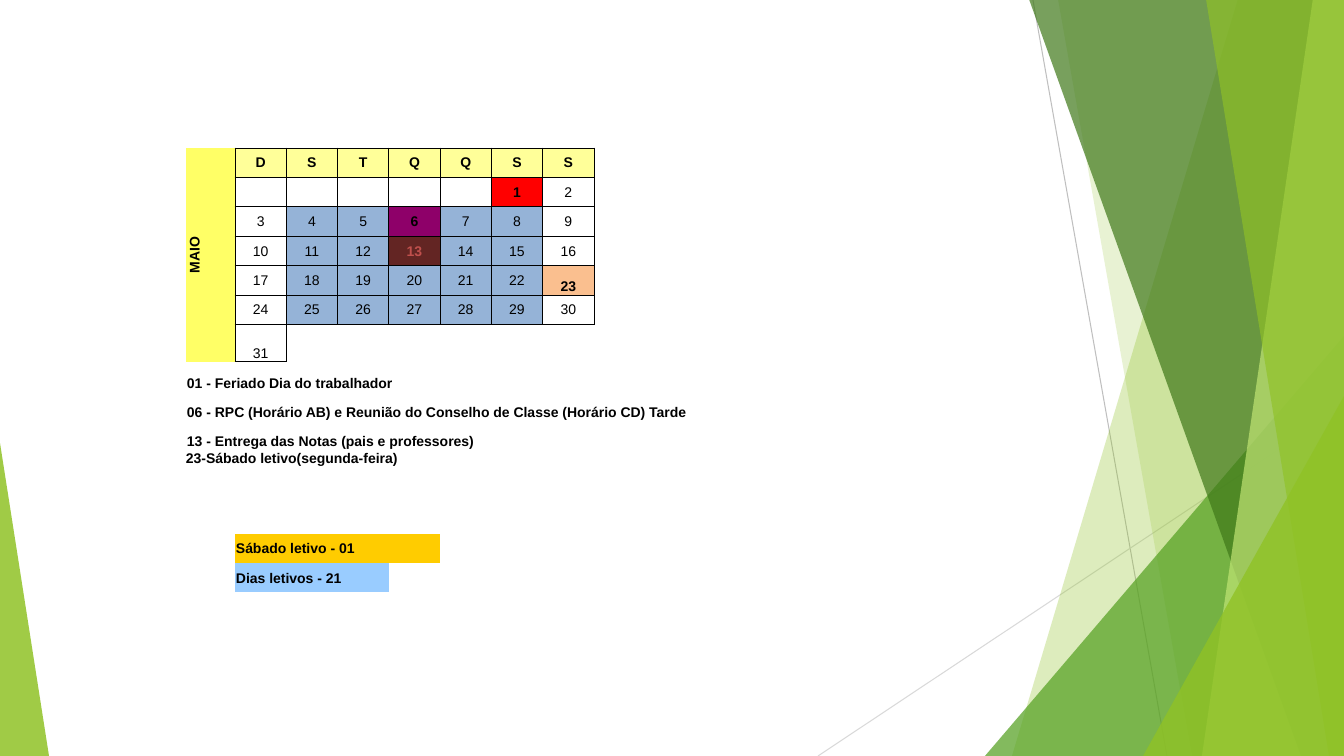
import pptx
import pptx.util
import pptx.dml.color
import pptx.enum.shapes
import pptx.enum.text
import pptx.oxml
import pptx.oxml.ns
import lxml.etree

RGB = pptx.dml.color.RGBColor
BLACK, WHITE = RGB(0, 0, 0), RGB(255, 255, 255)
SILVER, PALE = RGB(0xBF, 0xBF, 0xBF), RGB(0xD9, 0xD9, 0xD9)
LEAF, GRASS = RGB(0x90, 0xC2, 0x26), RGB(0x54, 0xA0, 0x21)
MOSS, LIME = RGB(0x3F, 0x78, 0x19), RGB(0xC0, 0xE4, 0x74)
YELLOW, CREAM = RGB(255, 255, 0x66), RGB(255, 255, 0x99)
RED, PLUM = RGB(255, 0, 0), RGB(0x8E, 0, 0x69)
WINE, ROSE = RGB(0x63, 0x25, 0x23), RGB(0xC0, 0x50, 0x4D)
BLUE, PEACH = RGB(0x95, 0xB3, 0xD7), RGB(0xFA, 0xBF, 0x8F)
GOLD, SKY = RGB(255, 0xCC, 0), RGB(0x99, 0xCC, 255)
WIDE, HIGH = 1344, 756
SCALE = 12192000 / WIDE
PLAIN = "{2D5ABB26-0587-4C30-8999-92F81FD0307C}"
KINDS = pptx.enum.shapes
ALIGN = pptx.enum.text.PP_ALIGN
ANCHOR = pptx.enum.text.MSO_ANCHOR
MARKS = {1: RED, 6: PLUM, 13: WINE, 23: PEACH}
qn = pptx.oxml.ns.qn


def px(size):
    """Turn pixels into EMU."""
    return pptx.util.Emu(round(size * SCALE))


def sub(node, tag, **attrs):
    """Add a child element to an XML node."""
    return lxml.etree.SubElement(node, qn(tag), attrs)


def put(item, values):
    """Set each attribute named in a dict."""
    for name, value in values.items():
        setattr(item, name, value)


def paint(shape, color, alpha):
    """Give a shape a see-through fill without line or shadow."""
    shape.shadow.inherit = False
    shape.line.fill.background()
    shape.fill.solid()
    shape.fill.fore_color.rgb = color
    tint = shape.fill._xPr.find(qn("a:solidFill"))[0]
    sub(tint, "a:alpha", val=str(alpha * 1000))


def ray(slide, start, end, color):
    """Draw a thin straight line."""
    line = slide.shapes.add_connector(
        KINDS.MSO_CONNECTOR.STRAIGHT, *map(px, start + end))
    put(line.line, {"width": pptx.util.Pt(0.75)})
    line.line.color.rgb = color
    sub(line._element.spPr, "a:effectLst")


def band(slide, top, low, color, alpha):
    """Fill the area from a slanted edge to the right side."""
    pen = slide.shapes.build_freeform(top, -1, scale=SCALE)
    pen.add_line_segments([(WIDE, -1), (WIDE, HIGH), (low, HIGH)], close=True)
    paint(pen.convert_to_shape(), color, alpha)


def wedge(slide, box, tip, color, alpha):
    """Draw a triangle whose tip sits at a share of its width."""
    shape = slide.shapes.add_shape(
        KINDS.MSO_SHAPE.ISOSCELES_TRIANGLE, *map(px, box))
    shape.adjustments[0] = tip
    paint(shape, color, alpha)


def decor(slide):
    """Draw the green facets at both sides."""
    ray(slide, (1033, 0), (1167, HIGH), SILVER)
    ray(slide, (WIDE, 406), (818, HIGH), PALE)
    band(slide, 1238, 1012, LEAF, 30)
    band(slide, 1058, 1192, LEAF, 20)
    wedge(slide, (985, 336, 359, 420), 1, GRASS, 72)
    band(slide, 1029, 1301, MOSS, 70)
    band(slide, 1313, 1202, LIME, 70)
    band(slide, 1206, 1329, LEAF, 65)
    wedge(slide, (1143, 396, 201, 360), 1, LEAF, 80)
    wedge(slide, (0, 443, 49, 313), 0, LEAF, 85)


def write(frame, text, bold=True, color=BLACK, align=ALIGN.LEFT):
    """Write one line of small text."""
    para = frame.paragraphs[0]
    para.alignment = align
    run = para.add_run()
    put(run, {"text": text})
    put(run.font, {"name": "Arial", "size": pptx.util.Pt(10), "bold": bold})
    run.font.color.rgb = color


def shade(cell, color):
    """Fill a table cell."""
    cell.fill.solid()
    cell.fill.fore_color.rgb = color


def edge(cell, sides):
    """Rule the given sides of a cell, in the order L, R, T, B."""
    props = cell._tc.get_or_add_tcPr()
    for place, side in enumerate(sides):
        line = sub(props, "a:ln" + side, w="6350")
        sub(sub(line, "a:solidFill"), "a:srgbClr", val=str(BLACK))
        props.insert(place, line)


def month(grid):
    """Fill the month label, the weekday heads and the days."""
    label = grid.cell(0, 0)
    label.merge(grid.cell(6, 0))
    write(label.text_frame, "MAIO", align=ALIGN.CENTER)
    shade(label, YELLOW)
    label._tc.get_or_add_tcPr().set("vert", "vert270")
    for col, name in enumerate("DSTQQSS"):
        head = grid.cell(0, col + 1)
        write(head.text_frame, name, align=ALIGN.CENTER)
        shade(head, CREAM)
        edge(head, "LRTB")
    for slot in range(36):
        week, col = divmod(slot, 7)
        day = slot - 4
        cell = grid.cell(week + 1, col + 1)
        work = BLUE if day > 0 and 0 < col < 6 else WHITE
        shade(cell, MARKS.get(day, work))
        edge(cell, "LRT" if day == 31 else "LRTB")
        if day > 0:
            color = ROSE if day == 13 else BLACK
            write(cell.text_frame, str(day), day in MARKS, color, ALIGN.CENTER)
        if day in (23, 31):
            cell.vertical_anchor = ANCHOR.BOTTOM


def notes(grid):
    """Write the dated notes and the coloured totals."""
    rows = [
        (7, 0, 6, "01 - Feriado Dia do trabalhador", None),
        (8, 0, 13, "06 - RPC (Horário AB) e Reunião do Conselho de Classe "
                   "(Horário CD) Tarde", None),
        (9, 0, 8, "13 - Entrega das Notas (pais e professores)", None),
        (11, 1, 4, "Sábado letivo - 01", GOLD),
        (12, 1, 3, "Dias letivos - 21", SKY),
    ]
    for row, col, span, text, color in rows:
        cell = grid.cell(row, col)
        cell.merge(grid.cell(row, col + span - 1))
        write(cell.text_frame, text)
        if color:
            shade(cell, color)
        else:
            cell.vertical_anchor = ANCHOR.BOTTOM


def plan(slide, left, top):
    """Place the calendar table with its notes."""
    day, step = px(359) // 7, px(147) // 5
    wide = [px(49)] + [day] * 7 + [px(59), px(83), px(58), day, day]
    high = [step] * 6 + [px(37)] + [step] * 3 + [px(84)] + [step] * 2
    frame = slide.shapes.add_table(
        13, 13, px(left), px(top), sum(wide), sum(high))
    grid = frame.table
    put(grid, {"first_row": False, "horz_banding": False})
    grid._tbl.tblPr.find(qn("a:tableStyleId")).text = PLAIN
    for col, size in zip(grid.columns, wide):
        col.width = size
    for row, size in zip(grid.rows, high):
        row.height = size
    for cell in grid.iter_cells():
        put(cell, {"margin_left": px(1), "margin_right": px(1),
                   "margin_top": px(1), "margin_bottom": 0,
                   "vertical_anchor": ANCHOR.MIDDLE})
        cell.fill.background()
        sub(cell.text_frame.paragraphs[0]._p, "a:endParaRPr", sz="1000")
    month(grid)
    notes(grid)


def extra(slide, box):
    """Add the note on the school Saturday."""
    frame = slide.shapes.add_textbox(*map(px, box)).text_frame
    frame.word_wrap = True
    write(frame, "23-Sábado letivo(segunda-feira)")


def main():
    """Build and save the slide."""
    deck = pptx.Presentation()
    put(deck, {"slide_width": px(WIDE), "slide_height": px(HIGH)})
    slide = deck.slides.add_slide(deck.slide_layouts[6])
    decor(slide)
    plan(slide, 186, 148)
    extra(slide, (176, 445, 397, 27))
    deck.save("out.pptx")


if __name__ == "__main__":
    main()
